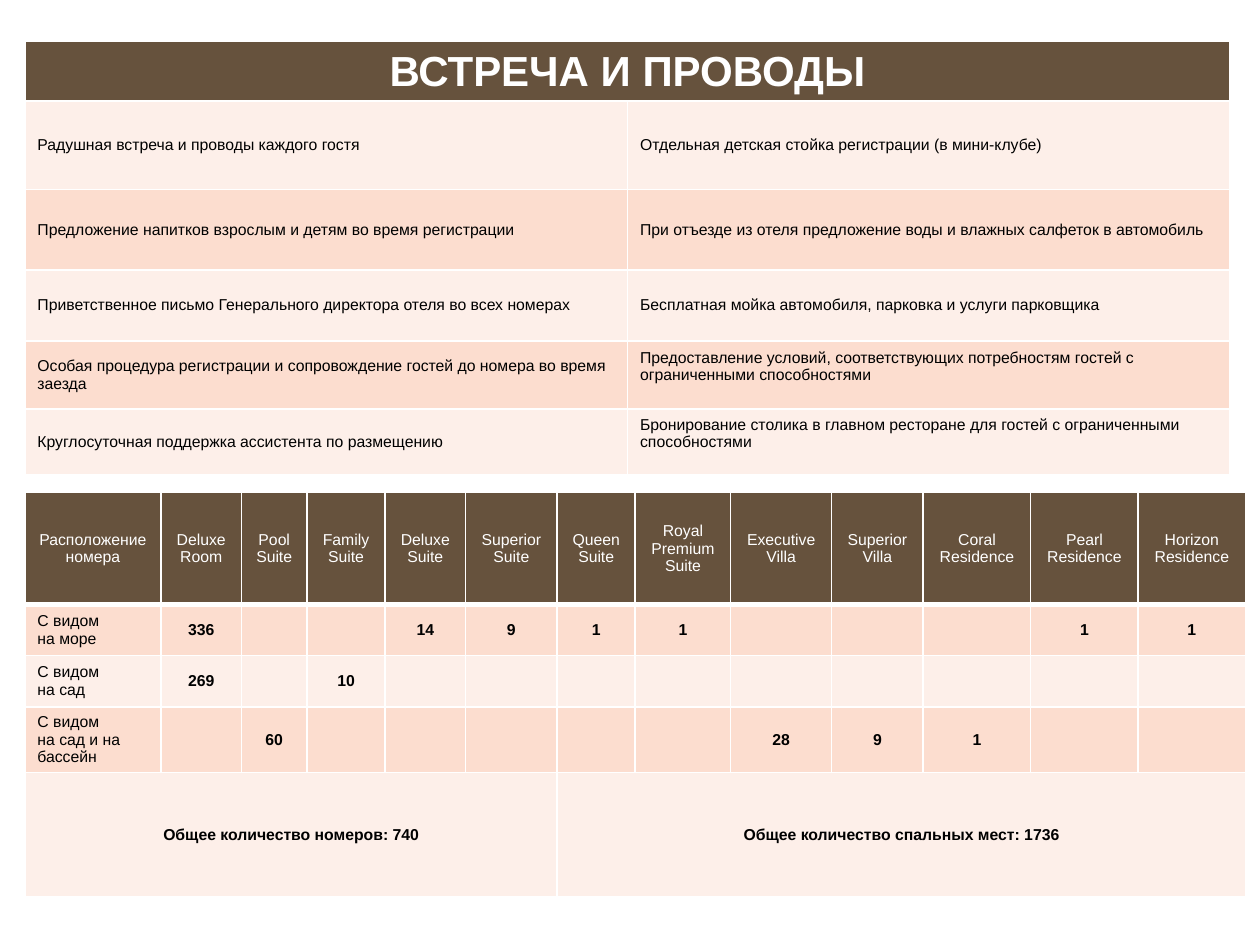
from dataclasses import dataclass

from lxml.etree import SubElement
from pptx import Presentation
from pptx.dml.color import RGBColor
from pptx.enum.text import MSO_ANCHOR as Anchor, PP_ALIGN as Align
from pptx.oxml.ns import qn
from pptx.table import Table, _Cell as Cell
from pptx.util import Pt

BROWN, PEACH, CREAM = "66523D", "FCDDCF", "FDEFE9"
WHITE, BLACK = "FFFFFF", "000000"


@dataclass(frozen=True)
class CellStyle:
    fill: str
    color: str = BLACK
    size: float = 9
    bold: bool = False
    align: Align = Align.LEFT
    side_margin: float = 7.2
    bottom_margin: float = 3.6
    top_line: float = 1
    bottom_line: float = 1


def rgb(value: str) -> RGBColor:
    return RGBColor.from_string(value)


def set_borders(cell: Cell, style: CellStyle) -> None:
    """Draw white lines on the four sides; must run before the fill is set."""
    widths = {"L": 1, "R": 1, "T": style.top_line, "B": style.bottom_line}
    properties = cell._tc.get_or_add_tcPr()
    for side, width in widths.items():
        line = SubElement(properties, qn(f"a:ln{side}"), w=str(Pt(width)))
        SubElement(SubElement(line, qn("a:solidFill")), qn("a:srgbClr"), val=WHITE)


def fill_cell(cell: Cell, text: str, style: CellStyle) -> None:
    """Format a cell; each line of the text becomes a paragraph."""
    set_borders(cell, style)
    cell.fill.solid()
    cell.fill.fore_color.rgb = rgb(style.fill)
    layout = {
        "vertical_anchor": Anchor.MIDDLE,
        "margin_left": Pt(style.side_margin),
        "margin_right": Pt(style.side_margin),
        "margin_bottom": Pt(style.bottom_margin),
    }
    for name, value in layout.items():
        setattr(cell, name, value)
    if not text:
        return
    cell.text_frame.text = text
    font_format = {"name": "Arial", "size": Pt(style.size), "bold": style.bold}
    for para in cell.text_frame.paragraphs:
        para.alignment = style.align
        for span in para.runs:
            for name, value in font_format.items():
                setattr(span.font, name, value)
            span.font.color.rgb = rgb(style.color)


def add_grid(page, left: float, top: float,
             widths: list[float], heights: list[float]) -> Table:
    frame = page.shapes.add_table(
        len(heights), len(widths), Pt(left), Pt(top), Pt(sum(widths)), Pt(sum(heights)))
    table = frame.table
    table.first_row = table.horz_banding = False
    for column, width in zip(table.columns, widths):
        column.width = Pt(width)
    for row, height in zip(table.rows, heights):
        row.height = Pt(height)
    return table


def merge_row(table: Table, row: int, first: int, last: int) -> Cell:
    table.cell(row, first).merge(table.cell(row, last))
    return table.cell(row, first)


ROOM_TYPES = [
    "Расположение\nномера", "Deluxe\nRoom", "Pool\nSuite", "Family\nSuite",
    "Deluxe\nSuite", "Superior\nSuite", "Queen\nSuite", "Royal\nPremium\nSuite",
    "Executive\nVilla", "Superior\nVilla", "Coral\nResidence",
    "Pearl\nResidence", "Horizon\nResidence",
]
# Room counts by view, keyed by column number
ROOM_COUNTS = [
    ("С видом\nна море", {1: 336, 4: 14, 5: 9, 6: 1, 7: 1, 11: 1, 12: 1}),
    ("С видом\nна сад", {1: 269, 3: 10}),
    ("С видом\nна сад и на\nбассейн", {2: 60, 8: 28, 9: 9, 10: 1}),
]
SERVICES = [
    ("Радушная встреча и проводы каждого гостя",
     "Отдельная детская стойка регистрации (в мини-клубе)"),
    ("Предложение напитков взрослым и детям во время регистрации",
     "При отъезде из отеля предложение воды и влажных салфеток в автомобиль"),
    ("Приветственное письмо Генерального директора отеля во всех номерах",
     "Бесплатная мойка автомобиля, парковка и услуги парковщика"),
    ("Особая процедура регистрации и сопровождение гостей до номера во время заезда",
     "Предоставление условий, соответствующих потребностям гостей с "
     "ограниченными способностями"),
    ("Круглосуточная поддержка ассистента по размещению",
     "Бронирование столика в главном ресторане для гостей с ограниченными "
     "способностями"),
]


def add_rooms(page) -> None:
    widths = [77.8, 46, 37.5, 44.6, 46, 52.4, 44.6, 54.6, 57.6, 52.4, 61.4, 61.4, 61.4]
    table = add_grid(page, 14.2, 281.5, widths, [64, 28.8, 28.8, 37.4, 71.3])

    # Header
    header = CellStyle(BROWN, WHITE, align=Align.CENTER, side_margin=2.9, bottom_line=3)
    for column, room_type in enumerate(ROOM_TYPES):
        fill_cell(table.cell(0, column), room_type, header)

    # Counts
    for row, (view, counts) in enumerate(ROOM_COUNTS, start=1):
        fill = PEACH if row % 2 else CREAM
        top_line = 3 if row == 1 else 1
        fill_cell(table.cell(row, 0), view, CellStyle(fill, top_line=top_line))
        number = CellStyle(fill, bold=True, align=Align.CENTER, top_line=top_line)
        for column in range(1, len(widths)):
            fill_cell(table.cell(row, column), str(counts.get(column, "")), number)

    # Totals
    total = CellStyle(CREAM, bold=True, align=Align.CENTER, side_margin=2.9)
    fill_cell(merge_row(table, 4, 0, 5), "Общее количество номеров: 740", total)
    fill_cell(merge_row(table, 4, 6, 12), "Общее количество спальных мест: 1736", total)


def add_services(page) -> None:
    table = add_grid(page, 14.2, 23.8, [344.4, 344.4], [33.6, 50.4, 46.1, 40.5, 38.9, 37.8])
    heading = CellStyle(BROWN, WHITE, size=24, bold=True, align=Align.CENTER)
    fill_cell(merge_row(table, 0, 0, 1), "ВСТРЕЧА И ПРОВОДЫ", heading)
    for row, texts in enumerate(SERVICES, start=1):
        for column, text in enumerate(texts):
            # The two-line texts on the right sit above the middle of their rows
            raised = column == 1 and row >= 4
            style = CellStyle(CREAM if row % 2 else PEACH,
                              bottom_margin=13.2 if raised else 3.6)
            fill_cell(table.cell(row, column), text, style)


def main() -> None:
    deck = Presentation()
    deck.slide_width, deck.slide_height = Pt(720), Pt(540)
    page = deck.slides.add_slide(deck.slide_layouts[6])
    add_rooms(page)
    add_services(page)
    deck.save("out.pptx")


if __name__ == "__main__":
    main()
